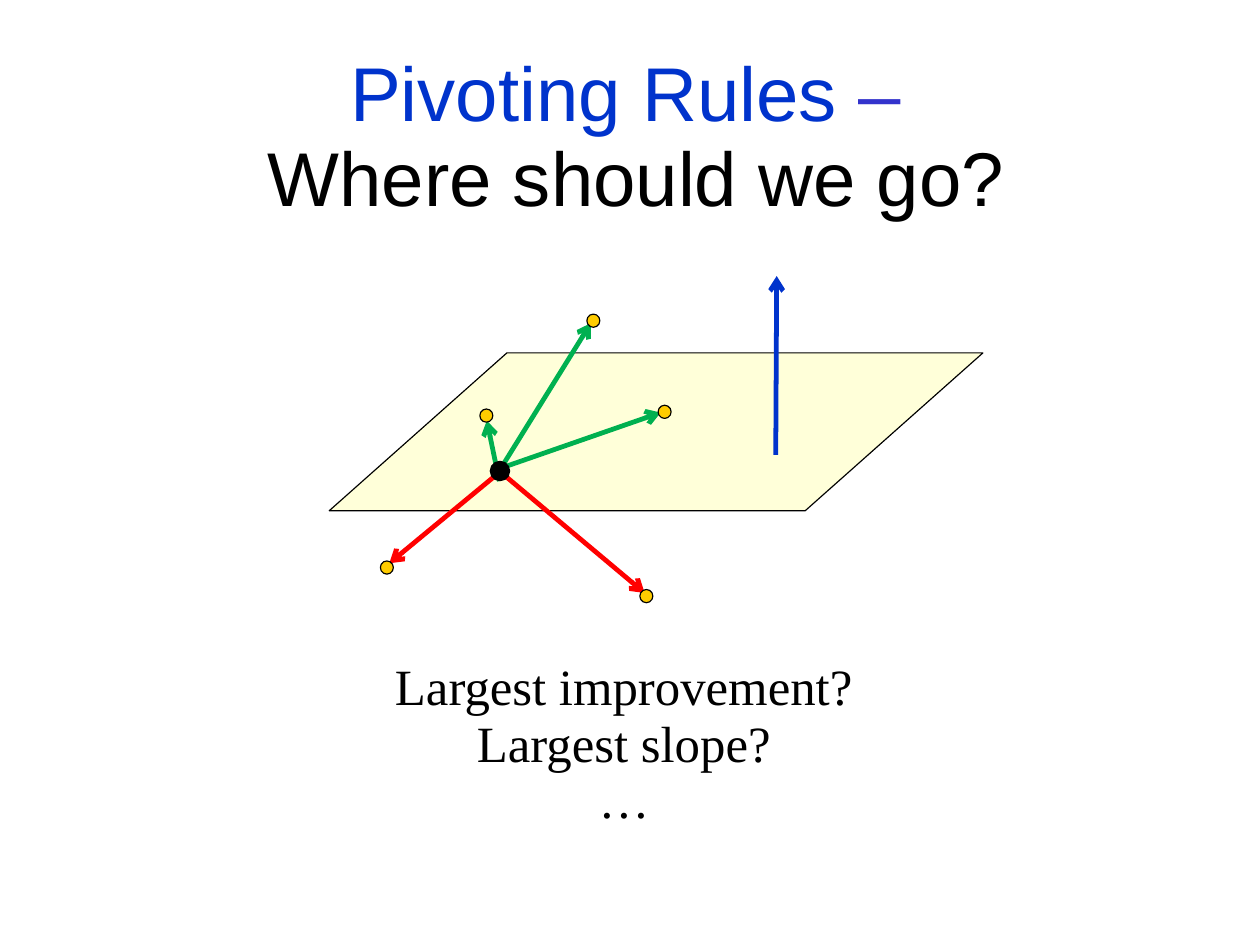
from lxml import etree
from pptx import Presentation
from pptx.dml.color import RGBColor
from pptx.enum.shapes import MSO_CONNECTOR, MSO_SHAPE
from pptx.enum.text import MSO_ANCHOR, MSO_AUTO_SIZE, PP_ALIGN
from pptx.oxml.ns import qn
from pptx.util import Pt

STRAIGHT = MSO_CONNECTOR.STRAIGHT
OVAL, PARALLELOGRAM = MSO_SHAPE.OVAL, MSO_SHAPE.PARALLELOGRAM
TOP, MIDDLE = MSO_ANCHOR.TOP, MSO_ANCHOR.MIDDLE
CENTER, GROW = PP_ALIGN.CENTER, MSO_AUTO_SIZE.SHAPE_TO_FIT_TEXT

THEME = {
    "title_font": "Arial", "title_size": 48,
    "body_font": "Times New Roman", "body_size": 32,
    "line_spacing": 0.93, "outline": 0.75, "arrow": 3, "plane_alpha": 15,
    "title": "0033CC", "dash": "3333CC", "text": "000000",
    "plane": "FFFF00", "vertex": "000000", "neighbor": "FFCC00",
    "up": "00B050", "down": "FF0000", "objective": "0033CC",
}

SLIDE = (793.75, 595.25)
TITLE = [[("Pivoting Rules ", "title"), ("– ", "dash"), ("\v", "dash"),
          ("Where should we go?", "text")]]
RULES = [[("Largest improvement?", "text")], [("Largest slope?", "text")],
         [("…", "text")]]
TITLE_BOX = (43.6, 33.1, 714.2, 108)
RULES_BOX = (28.1, 412.3, 730.1, 115.2)
PLANE = (207.4, 222.3, 411.8, 99.4)
PLANE_SLANT = 1.126
VERTEX = (315, 296.7)
VERTEX_SIZE = (12.2, 12.2)
NEIGHBOR_SIZE = (8.2, 8.3)
NEIGHBORS = [(373.8, 202), (306.4, 261.8), (418.7, 259.4),
             (243.7, 357.5), (407.2, 375.5)]
ARROWS = [
    ((315.4, 297.4), (406.1, 373.5), "down"),
    ((315.4, 295.2), (372.2, 203.6), "up"),
    ((314.6, 303.1), (306.7, 265), "up"),
    ((314.6, 295.2), (416.2, 259.9), "up"),
    ((313.9, 298.1), (245.3, 354.8), "down"),
]
OBJECTIVE = ((488.7, 286.6), (489.3, 173.9), "objective")


def color(name):
    return RGBColor.from_string(THEME[name])


def add_solid(s, kind, box, fill):
    sp = s.shapes.add_shape(kind, *map(Pt, box))
    sp.shadow.inherit = False
    sp.fill.solid()
    sp.fill.fore_color.rgb = color(fill)
    sp.line.color.rgb = color("text")
    sp.line.width = Pt(THEME["outline"])
    return sp


def add_plane(s):
    sp = add_solid(s, PARALLELOGRAM, PLANE, "plane")
    sp.adjustments[0] = PLANE_SLANT
    clr = sp._element.spPr.find(qn("a:solidFill"))[0]
    etree.SubElement(clr, qn("a:alpha"), val=str(THEME["plane_alpha"] * 1000))


def add_dot(s, center, size, fill):
    corner = [c - d / 2 for c, d in zip(center, size)]
    add_solid(s, OVAL, (*corner, *size), fill)


def add_arrow(s, start, end, name):
    c = s.shapes.add_connector(STRAIGHT, *map(Pt, start + end))
    c.line.color.rgb = color(name)
    c.line.width = Pt(THEME["arrow"])
    spPr = c._element.spPr
    etree.SubElement(spPr.find(qn("a:ln")), qn("a:tailEnd"), type="arrow")
    etree.SubElement(spPr, qn("a:effectLst"))


def add_text(s, box, paragraphs, style, frame):
    tf = s.shapes.add_textbox(*map(Pt, box)).text_frame
    for key, value in {"word_wrap": True, "auto_size": GROW, **frame}.items():
        setattr(tf, key, value)
    for i, runs in enumerate(paragraphs):
        p = tf.add_paragraph() if i else tf.paragraphs[0]
        p.alignment, p.line_spacing = CENTER, THEME["line_spacing"]
        for text, name in runs:
            if text == "\v":
                p.add_line_break()
                continue
            r = p.add_run()
            r.text = text
            r.font.name = THEME[style + "_font"]
            r.font.size = Pt(THEME[style + "_size"])
            r.font.color.rgb = color(name)


def main():
    prs = Presentation()
    prs.slide_width, prs.slide_height = map(Pt, SLIDE)
    s = prs.slides.add_slide(prs.slide_layouts[6])
    add_plane(s)
    for arrow in ARROWS:
        add_arrow(s, *arrow)
    add_text(s, RULES_BOX, RULES, "body", {"vertical_anchor": TOP})
    no_margins = {"margin_" + side: 0 for side in ("left", "top", "right", "bottom")}
    add_text(s, TITLE_BOX, TITLE, "title", {"vertical_anchor": MIDDLE, **no_margins})
    add_arrow(s, *OBJECTIVE)
    add_dot(s, VERTEX, VERTEX_SIZE, "vertex")
    for center in NEIGHBORS:
        add_dot(s, center, NEIGHBOR_SIZE, "neighbor")
    prs.save("out.pptx")


if __name__ == "__main__":
    main()
